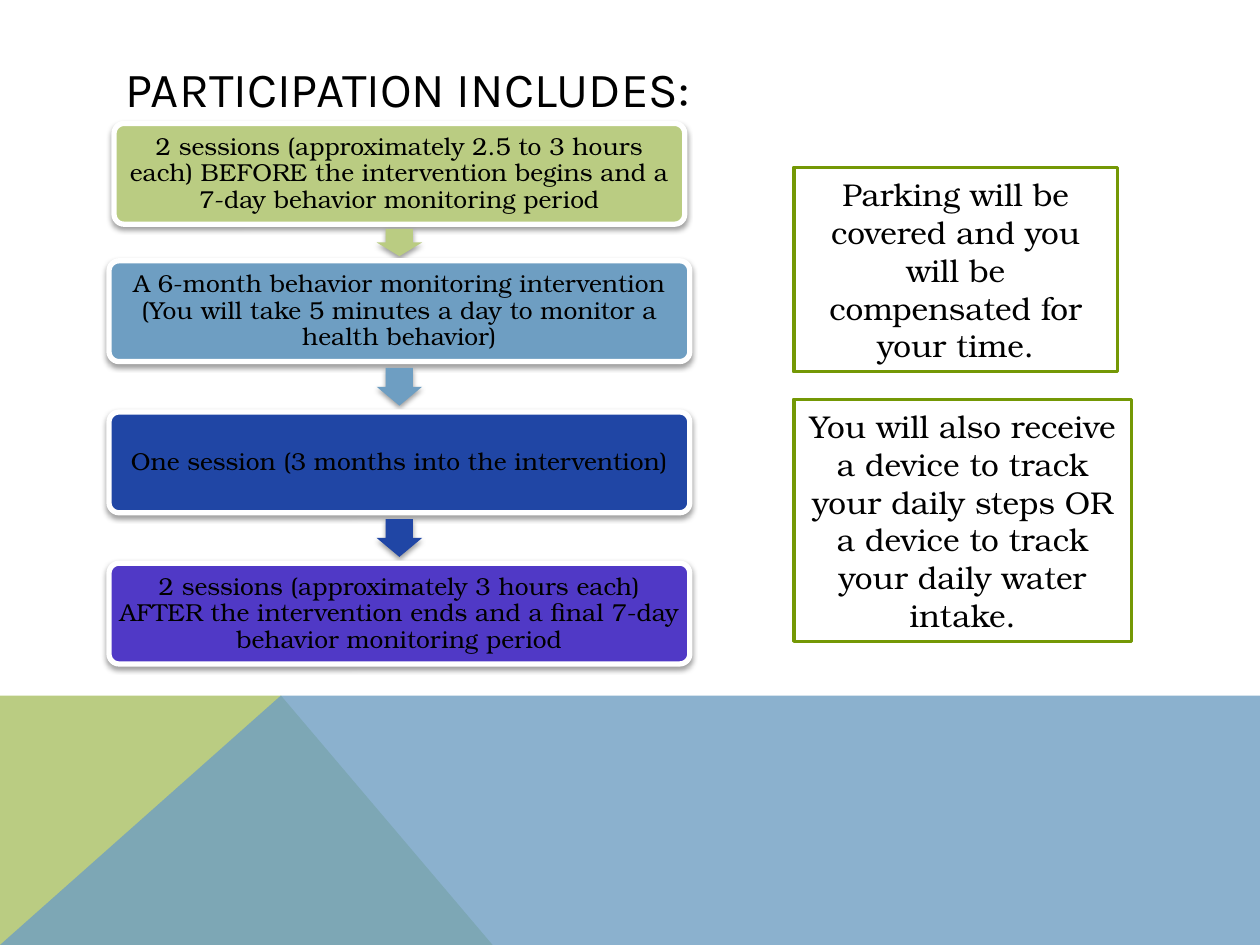
import pptx
import pptx.util
import pptx.dml.color
import pptx.enum.shapes
import pptx.enum.text
import lxml.etree

Inches, Pt = pptx.util.Inches, pptx.util.Pt
SHAPES = pptx.enum.shapes.MSO_SHAPE
ALIGN = pptx.enum.text.PP_ALIGN
MIDDLE = pptx.enum.text.MSO_ANCHOR.MIDDLE
DRAWING_NS = "http://schemas.openxmlformats.org/drawingml/2006/main"
COLORS = {
    "text": "000000", "white": "FFFFFF", "frame": "749805",
    "green": "BACC82", "sky": "6E9EC2", "navy": "2046A5", "violet": "5039C6",
}
WIDTH, HEIGHT = 10, 7.5
BODY_FONT = "TeX Gyre Bonum"


def paint(shape, fill, line=None, line_width=0):
    """Give a shape a flat fill and an optional outline, without a shadow."""
    shape.shadow.inherit = False
    shape.fill.solid()
    shape.fill.fore_color.rgb = pptx.dml.color.RGBColor.from_string(COLORS[fill])
    if line:
        shape.line.color.rgb = pptx.dml.color.RGBColor.from_string(COLORS[line])
        shape.line.width = Pt(line_width)
    else:
        shape.line.fill.background()


def write(shape, text, size, font=BODY_FONT, align=ALIGN.CENTER):
    frame = shape.text_frame
    frame.word_wrap = True
    frame.vertical_anchor = MIDDLE
    paragraph = frame.paragraphs[0]
    paragraph.text = text
    paragraph.alignment = align
    paragraph.font.size = Pt(size)
    paragraph.font.name = font
    paragraph.font.color.rgb = pptx.dml.color.RGBColor.from_string(COLORS["text"])
    return paragraph


deck = pptx.Presentation()
deck.slide_width, deck.slide_height = Inches(WIDTH), Inches(HEIGHT)
slide = deck.slides.add_slide(deck.slide_layouts[6])

# Footer: a green wedge under a translucent blue band
band_top, peak = 5.52, 2.23
wedges = [
    ("green", [(0, HEIGHT), (0, band_top), (peak, band_top), (3.91, HEIGHT)]),
    ("sky", [(0, HEIGHT), (peak, band_top), (WIDTH, band_top), (WIDTH, HEIGHT)]),
]
for color, corners in wedges:
    points = [(Inches(x), Inches(y)) for x, y in corners]
    builder = slide.shapes.build_freeform(*points[0])
    builder.add_line_segments(points[1:], close=True)
    wedge = builder.convert_to_shape()
    paint(wedge, color)
fill_color = wedge._element.spPr.find(f".//{{{DRAWING_NS}}}srgbClr")
lxml.etree.SubElement(fill_color, f"{{{DRAWING_NS}}}alpha", val="80000")

title = slide.shapes.add_textbox(Inches(0.9), Inches(0.4), Inches(8.22), Inches(0.6))
write(title, "PARTICIPATION INCLUDES:", 28, "Karla", ALIGN.LEFT)

# Steps: top, width, colour, text; an arrow fills 3/4 of each gap
steps = [
    (0.98, 4.53, "green", "2 sessions (approximately 2.5 to 3 hours each) BEFORE "
     "the intervention begins and a 7-day behavior monitoring period"),
    (2.07, 4.61, "sky", "A 6-month behavior monitoring intervention "
     "(You will take 5 minutes a day to monitor a health behavior)"),
    (3.27, 4.61, "navy", "One session (3 months into the intervention)"),
    (4.47, 4.61, "violet", "2 sessions (approximately 3 hours each) AFTER "
     "the intervention ends and a final 7-day behavior monitoring period"),
]
step_center, step_height, arrow_width = 3.17, 0.8, 0.36
flow = []
for number, (top, width, color, text) in enumerate(steps):
    step = slide.shapes.add_shape(
        SHAPES.ROUNDED_RECTANGLE, Inches(step_center - width / 2), Inches(top),
        Inches(width), Inches(step_height))
    step.adjustments[0] = 0.1
    paint(step, color, "white", 3)
    write(step, text, 14).line_spacing = 0.9
    frame = step.text_frame
    frame.margin_left = frame.margin_right = Inches(0.06)
    frame.margin_top = frame.margin_bottom = Inches(0.06)
    flow.append(step)
    if number + 1 < len(steps):
        bottom = top + step_height
        gap = steps[number + 1][0] - bottom
        arrow = slide.shapes.add_shape(
            SHAPES.DOWN_ARROW, Inches(step_center - arrow_width / 2),
            Inches(bottom + gap / 8), Inches(arrow_width), Inches(gap * 3 / 4))
        arrow.adjustments[0], arrow.adjustments[1] = 0.6, 0.5
        paint(arrow, color)
        flow.append(arrow)

# Soft shadow below every step and arrow
for part in flow:
    effects = part._element.spPr.find(f"{{{DRAWING_NS}}}effectLst")
    shadow = lxml.etree.SubElement(
        effects, f"{{{DRAWING_NS}}}outerShdw", blurRad=str(Pt(3.1)),
        dist=str(Pt(1.6)), dir="5400000", rotWithShape="0")
    tint = lxml.etree.SubElement(shadow, f"{{{DRAWING_NS}}}srgbClr", val=COLORS["text"])
    lxml.etree.SubElement(tint, f"{{{DRAWING_NS}}}alpha", val="38000")

notices = [
    (1.33, 2.57, 1.62, "Parking will be covered and you will be compensated "
     "for your time."),
    (3.17, 2.68, 1.92, "You will also receive a device to track your daily steps "
     "OR a device to track your daily water intake."),
]
for top, width, height, text in notices:
    notice = slide.shapes.add_shape(
        SHAPES.RECTANGLE, Inches(6.3), Inches(top), Inches(width), Inches(height))
    paint(notice, "white", "frame", 2)
    write(notice, text, 18)

deck.save("out.pptx")
